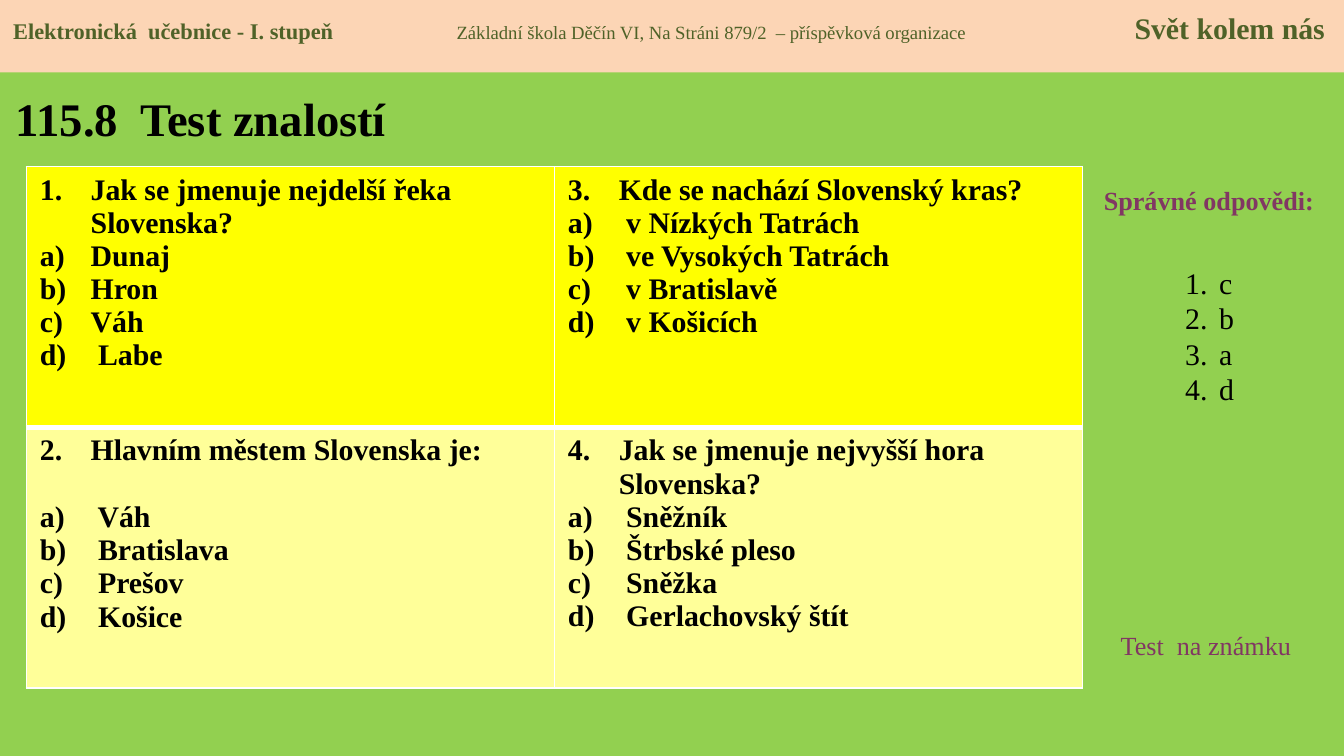
from lxml import etree
from pptx import Presentation
from pptx.dml.color import RGBColor
from pptx.enum import shapes, text
from pptx.oxml import ns
from pptx.util import Cm, Pt

FONT = "Times New Roman"
BLACK = RGBColor(0x00, 0x00, 0x00)
WHITE = RGBColor(0xFF, 0xFF, 0xFF)
GREEN = RGBColor(0x92, 0xD0, 0x50)
PEACH = RGBColor(0xFC, 0xD5, 0xB5)
OLIVE = RGBColor(0x4F, 0x62, 0x28)
PURPLE = RGBColor(0x81, 0x37, 0x63)
YELLOW = RGBColor(0xFF, 0xFF, 0x00)
PALE_YELLOW = RGBColor(0xFF, 0xFF, 0x99)

QUESTIONS = [
    ("Jak se jmenuje nejdelší řeka Slovenska?",
     ["Dunaj", "Hron", "Váh", " Labe"]),
    ("Hlavním městem Slovenska je:",
     [" Váh", " Bratislava", " Prešov", " Košice"]),
    ("Kde se nachází Slovenský kras?",
     [" v Nízkých Tatrách", " ve Vysokých Tatrách", " v Bratislavě", " v Košicích"]),
    ("Jak se jmenuje nejvyšší hora Slovenska?",
     [" Sněžník", " Štrbské pleso", " Sněžka", " Gerlachovský štít"]),
]
GAP_AFTER_QUESTION = {2: Pt(18)}


def add_run(paragraph, words, size, color=BLACK, bold=False):
    """Append one formatted run to the paragraph."""
    run = paragraph.add_run()
    run.text = words
    run.font.name = FONT
    run.font.size = Pt(size)
    run.font.bold = bold
    run.font.color.rgb = color


def number_paragraph(paragraph, scheme, indent, start=1):
    """Give the paragraph automatic numbering with a hanging indent."""
    properties = paragraph._p.get_or_add_pPr()
    properties.set("marL", str(indent))
    properties.set("indent", str(-indent))
    numbering = etree.SubElement(properties, ns.qn("a:buAutoNum"), type=scheme)
    if start > 1:
        numbering.set("startAt", str(start))


def paragraphs_of(frame, count):
    """Yield the first paragraph of the frame, then new ones up to the count."""
    yield frame.paragraphs[0]
    for _ in range(count - 1):
        yield frame.add_paragraph()


def add_label(slide, box, words, size, color=BLACK, bold=False, align=None):
    """Place a one-line text box."""
    frame = slide.shapes.add_textbox(*box).text_frame
    frame.word_wrap = True
    frame.vertical_anchor = text.MSO_ANCHOR.MIDDLE
    paragraph = frame.paragraphs[0]
    paragraph.alignment = align
    add_run(paragraph, words, size, color, bold)


def add_header(slide, box):
    """Place the top band with its three tabbed captions."""
    shape = slide.shapes.add_shape(shapes.MSO_SHAPE.RECTANGLE, *box)
    shape.shadow.inherit = False
    shape.fill.solid()
    shape.fill.fore_color.rgb = PEACH
    shape.line.fill.background()
    frame = shape.text_frame
    frame.vertical_anchor = text.MSO_ANCHOR.TOP
    frame.margin_top = Cm(0.18)
    paragraph = frame.paragraphs[0]
    paragraph.alignment = text.PP_ALIGN.LEFT
    tabs = etree.SubElement(paragraph._p.get_or_add_pPr(), ns.qn("a:tabLst"))
    for position, side in [(Cm(8.38), "l"), (Cm(24.79), "r")]:
        etree.SubElement(tabs, ns.qn("a:tab"), pos=str(position), algn=side)
    add_run(paragraph, "Elektronická  učebnice - I. stupeň\t", 12, OLIVE, True)
    add_run(paragraph, "Základní škola Děčín VI, Na Stráni 879/2  – příspěvková organizace\t",
            10, OLIVE)
    add_run(paragraph, "Svět kolem nás", 16, OLIVE, True)


def style_cell(cell, fill, widths):
    """Draw white borders of the given widths and fill the cell."""
    properties = cell._tc.get_or_add_tcPr()
    for side, width in zip("LRTB", widths):
        line = etree.SubElement(properties, ns.qn(f"a:ln{side}"), w=str(Pt(width)))
        solid = etree.SubElement(line, ns.qn("a:solidFill"))
        etree.SubElement(solid, ns.qn("a:srgbClr"), val=str(WHITE))
    cell.fill.solid()
    cell.fill.fore_color.rgb = fill


def add_questions(slide, box):
    """Place the questions in a two by two table, column by column."""
    table = slide.shapes.add_table(2, 2, *box).table
    for index, (question, answers) in enumerate(QUESTIONS):
        column, row = divmod(index, 2)
        number = index + 1
        cell = table.cell(row, column)
        style_cell(cell, (YELLOW, PALE_YELLOW)[row],
                   [(1, 1, 1, 3), (1, 1, 3, 1)][row])
        lines = [question] + answers
        for position, paragraph in enumerate(paragraphs_of(cell.text_frame, len(lines))):
            if position == 0:
                number_paragraph(paragraph, "arabicPeriod", Cm(0.96), number)
            else:
                number_paragraph(paragraph, "alphaLcParenR", Cm(0.96))
            if position == 1 and number in GAP_AFTER_QUESTION:
                paragraph.space_before = GAP_AFTER_QUESTION[number]
            add_run(paragraph, lines[position], 16, BLACK, True)


def add_answers(slide, box):
    """Place the numbered list of correct answers."""
    frame = slide.shapes.add_textbox(*box).text_frame
    frame.word_wrap = True
    for letter, paragraph in zip("cbad", paragraphs_of(frame, 4)):
        number_paragraph(paragraph, "arabicPeriod", Cm(0.64))
        paragraph.line_spacing = Pt(19)
        add_run(paragraph, letter, 16)


def main():
    """Build and save the quiz slide."""
    presentation = Presentation()
    presentation.slide_width = Cm(25.4)
    presentation.slide_height = Cm(14.29)
    slide = presentation.slides.add_slide(presentation.slide_layouts[6])
    slide.background.fill.solid()
    slide.background.fill.fore_color.rgb = GREEN

    add_label(slide, (Cm(0.05), Cm(1.4), Cm(8.1), Cm(1.65)),
              "115.8  Test znalostí", 25, bold=True)
    add_label(slide, (Cm(20.45), Cm(3.35), Cm(4.8), Cm(0.86)), "Správné odpovědi:",
              14, PURPLE, True, text.PP_ALIGN.CENTER)
    add_questions(slide, (Cm(0.5), Cm(3.15), Cm(19.96), Cm(9.86)))
    add_answers(slide, (Cm(22.15), Cm(4.88), Cm(1.4), Cm(2.95)))
    add_label(slide, (Cm(20.93), Cm(11.76), Cm(3.99), Cm(0.86)),
              "Test  na známku", 14, PURPLE)
    add_header(slide, (Cm(0), Cm(0), Cm(25.4), Cm(1.37)))
    presentation.save("out.pptx")


if __name__ == "__main__":
    main()
